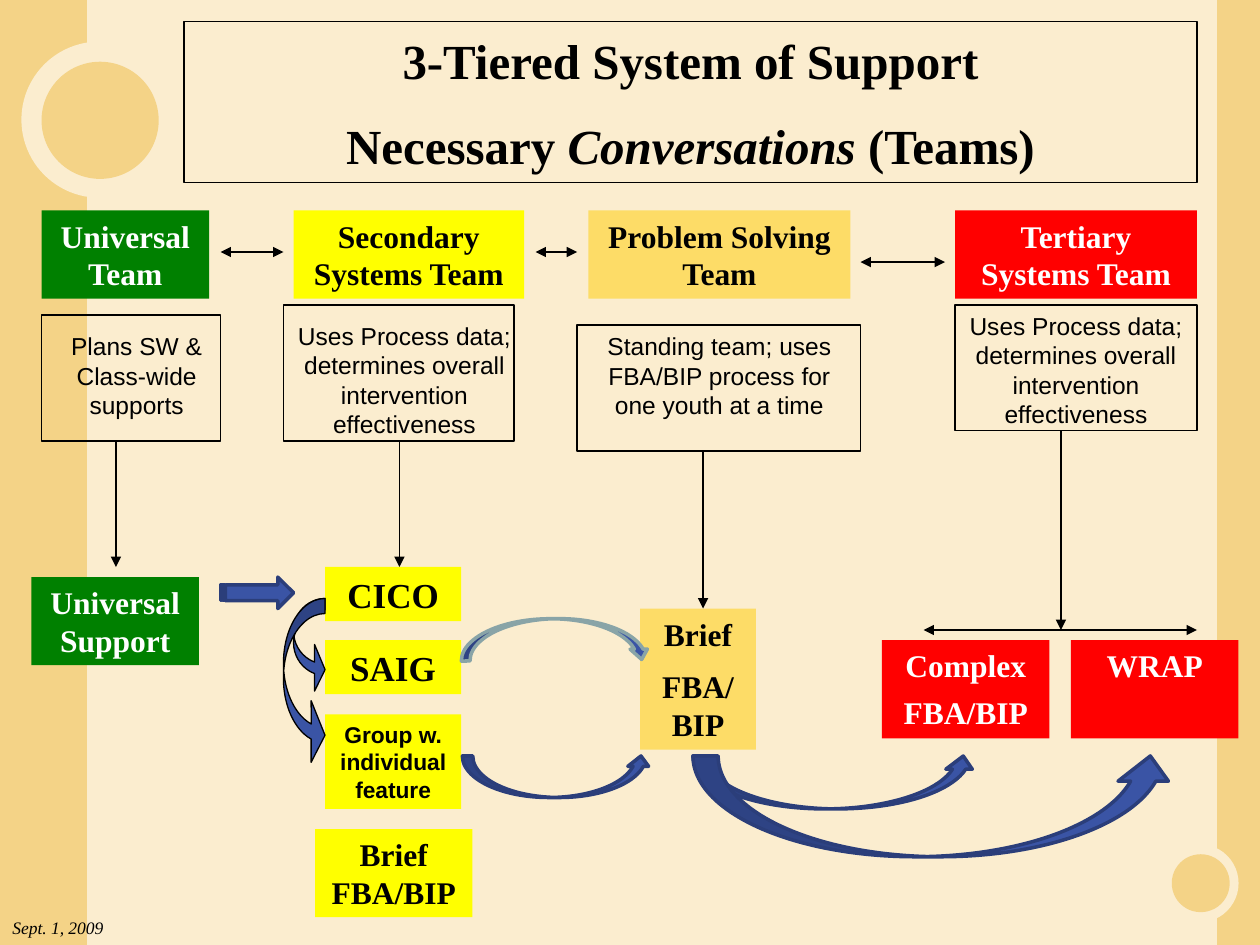
from lxml import etree
from pptx import Presentation
from pptx.dml.color import RGBColor
from pptx.enum import shapes, text
from pptx.oxml.ns import qn
from pptx.util import Inches, Pt

CREAM = RGBColor(0xFB, 0xED, 0xCF)
SAND = RGBColor(0xF4, 0xD3, 0x87)
BLACK = RGBColor(0, 0, 0)
WHITE = RGBColor(0xFF, 0xFF, 0xFF)
GREEN = RGBColor(0, 0x80, 0)
YELLOW = RGBColor(0xFF, 0xFF, 0)
GOLD = RGBColor(0xFF, 0xCC, 0)
RED = RGBColor(0xFF, 0, 0)
BLUE = RGBColor(0x3A, 0x54, 0xA5)
NAVY = RGBColor(0x2B, 0x3E, 0x7A)
GREY_BLUE = RGBColor(0x89, 0xA4, 0xA7)

SERIF, SANS = "Times New Roman", "Arial"
PRESET = shapes.MSO_SHAPE
MIDDLE, TOP = text.MSO_ANCHOR.MIDDLE, text.MSO_ANCHOR.TOP
CENTER, LEFT = text.PP_ALIGN.CENTER, text.PP_ALIGN.LEFT


def write(frame, paragraphs, size, font=SERIF, color=BLACK, bold=False,
          gap=0, anchor=MIDDLE, align=CENTER):
    """Fill a frame; each paragraph is a list of (words, italic) runs or a plain string."""
    frame.word_wrap = True
    frame.auto_size = text.MSO_AUTO_SIZE.NONE
    frame.vertical_anchor = anchor
    for index, runs in enumerate(paragraphs):
        paragraph = frame.paragraphs[0] if index == 0 else frame.add_paragraph()
        paragraph.alignment = align
        paragraph.space_before = Pt(gap if index else 0)
        for words, italic in [(runs, False)] if isinstance(runs, str) else runs:
            for number, part in enumerate(words.split("\n")):
                if number:
                    paragraph.add_line_break()
                run = paragraph.add_run()
                run.text = part
                run.font.name, run.font.size = font, Pt(size)
                run.font.bold, run.font.italic = bold, italic
                run.font.color.rgb = color


def add_preset(slide, preset, place, fill=None, line=None, width=0.75):
    shape = slide.shapes.add_shape(preset, *map(Inches, place))
    shape.shadow.inherit = False
    if fill is None:
        shape.fill.background()
    else:
        shape.fill.solid()
        shape.fill.fore_color.rgb = fill
    if line is None:
        shape.line.fill.background()
    else:
        shape.line.color.rgb = line
        shape.line.width = Pt(width)
    return shape


def add_box(slide, place, fill, paragraphs, size=18, color=BLACK, **style):
    box = add_preset(slide, PRESET.RECTANGLE, place, fill)
    if fill == GOLD:
        rgb = box._element.spPr.find(qn("a:solidFill"))[0]
        etree.SubElement(rgb, qn("a:alpha"), val="50000")
    write(box.text_frame, paragraphs, size, color=color, bold=True, **style)


def add_text(slide, place, paragraphs, size, **style):
    box = slide.shapes.add_textbox(*map(Inches, place))
    write(box.text_frame, paragraphs, size, **style)


def add_arrow(slide, start, end, both_ends=False):
    arrow = slide.shapes.add_connector(
        shapes.MSO_CONNECTOR.STRAIGHT, *map(Inches, start + end))
    arrow.line.color.rgb = BLACK
    arrow.line.width = Pt(0.75)
    line = arrow.line._get_or_add_ln()
    if both_ends:
        etree.SubElement(line, qn("a:headEnd"), type="triangle")
    etree.SubElement(line, qn("a:tailEnd"), type="triangle")
    etree.SubElement(arrow._element.spPr, qn("a:effectLst"))


def add_block_arrow(slide, preset, place, line=NAVY, width=2, adjustments=()):
    arrow = add_preset(slide, preset, place, BLUE, line, width)
    for index, value in enumerate(adjustments):
        arrow.adjustments[index] = value
    return arrow


def add_background(slide):
    slide.background.fill.solid()
    slide.background.fill.fore_color.rgb = CREAM
    for left, width in ((9.66, 0.34), (0, 0.69)):
        add_preset(slide, PRESET.RECTANGLE, (left, 0, width, 7.5), SAND)
    for left, top, size, fill in (
            (0.17, 0.33, 1.24, CREAM), (0.33, 0.49, 0.93, SAND),
            (9.21, 6.7, 0.62, CREAM), (9.3, 6.78, 0.46, SAND)):
        add_preset(slide, PRESET.OVAL, (left, top, size, size), fill)


def add_title(slide):
    title = slide.shapes.title
    title.left, title.top, title.width, title.height = map(
        Inches, (1.46, 0.17, 8.04, 1.28))
    title.line.color.rgb = BLACK
    title.line.width = Pt(0.75)
    write(title.text_frame,
          ["3-Tiered System of Support",
           [("Necessary ", False), ("Conversations", True), (" (Teams)", False)]],
          28, bold=True, gap=15)


def add_teams(slide):
    for left, width, fill, color, name in (
            (0.33, 1.33, GREEN, WHITE, "Universal\nTeam"),
            (2.33, 1.83, YELLOW, BLACK, "Secondary Systems Team"),
            (4.67, 2.08, GOLD, BLACK, "Problem Solving Team"),
            (7.58, 1.92, RED, WHITE, "Tertiary Systems Team")):
        add_box(slide, (left, 1.67, width, 0.7), fill, [name], color=color)
    for start, end, y in ((1.75, 2.25, 2), (4.25, 4.58, 2), (6.83, 7.5, 2.08)):
        add_arrow(slide, (start, y), (end, y), both_ends=True)


def add_duties(slide):
    process = "Uses Process data; determines overall intervention effectiveness"
    for place, frame, duty in (
            ((0.42, 2.58, 1.33, 0.8), (0.33, 2.5, 1.42, 1),
             "Plans SW & Class-wide supports"),
            ((2.25, 2.5, 1.92, 1.03), (2.25, 2.42, 1.83, 1.08), process),
            ((4.67, 2.58, 2.08, 0.8), (4.58, 2.58, 2.25, 1),
             "Standing team; uses FBA/BIP process for one youth at a time"),
            ((7.58, 2.42, 1.92, 1.03), (7.58, 2.42, 1.92, 1), process)):
        add_text(slide, place, [duty], 14, font=SANS)
        add_preset(slide, PRESET.RECTANGLE, frame, line=BLACK)
    for x, top, bottom in ((0.92, 3.5, 4.5), (3.17, 3.5, 4.5),
                           (5.58, 3.58, 4.83), (8.42, 3.42, 5)):
        add_arrow(slide, (x, top), (x, bottom))
    add_arrow(slide, (7.33, 5), (9.5, 5), both_ends=True)


def add_supports(slide):
    add_box(slide, (0.25, 4.58, 1.33, 0.7), GREEN, ["Universal Support"], color=WHITE)
    for top, name in ((4.5, "CICO"), (5.08, "SAIG")):
        add_box(slide, (2.58, top, 1.08, 0.43), YELLOW, [name], 20)
    add_box(slide, (2.58, 5.67, 1.08, 0.75), YELLOW,
            ["Group w. individual", "feature"], 13, font=SANS)
    add_box(slide, (2.5, 6.58, 1.25, 0.7), YELLOW, ["Brief FBA/BIP"])
    add_box(slide, (5.08, 4.83, 0.92, 1.12), GOLD, ["Brief", "FBA/BIP"], gap=8)
    for left, lines in ((7, ["Complex", "FBA/BIP"]), (8.5, ["WRAP"])):
        add_box(slide, (left, 5.08, 1.33, 0.78), RED, lines,
                color=WHITE, gap=5, anchor=TOP)


def add_flow(slide):
    for place in ((2.33, 4.75, 0.25, 0.75), (2.25, 4.75, 0.33, 1.33)):
        add_block_arrow(slide, PRESET.CURVED_RIGHT_ARROW, place, BLACK, 0.75,
                        (0.363, 1.482, 0.333))
    add_block_arrow(slide, PRESET.STRIPED_RIGHT_ARROW, (1.75, 4.58, 0.58, 0.25))
    for left, width, height in ((5.5, 2.25, 0.42), (5.5, 3.83, 0.8), (3.67, 1.5, 0.33)):
        add_block_arrow(slide, PRESET.CURVED_UP_ARROW, (left, 6, width, height))
    over = add_block_arrow(slide, PRESET.CURVED_UP_ARROW, (3.66, 4.91, 1.5, 0.33),
                           GREY_BLUE, adjustments=(0.208, 0.417, 0.25))
    over.rotation = 359.5
    over._element.spPr.find(qn("a:xfrm")).set("flipV", "1")


def main():
    presentation = Presentation()
    presentation.slide_width, presentation.slide_height = Inches(10), Inches(7.5)
    slide = presentation.slides.add_slide(presentation.slide_layouts[5])
    add_background(slide)
    add_title(slide)
    add_teams(slide)
    add_duties(slide)
    add_supports(slide)
    add_flow(slide)
    add_text(slide, (0, 7.23, 1.17, 0.27), [[("Sept. 1, 2009", True)]], 10, align=LEFT)
    presentation.save("out.pptx")


if __name__ == "__main__":
    main()
